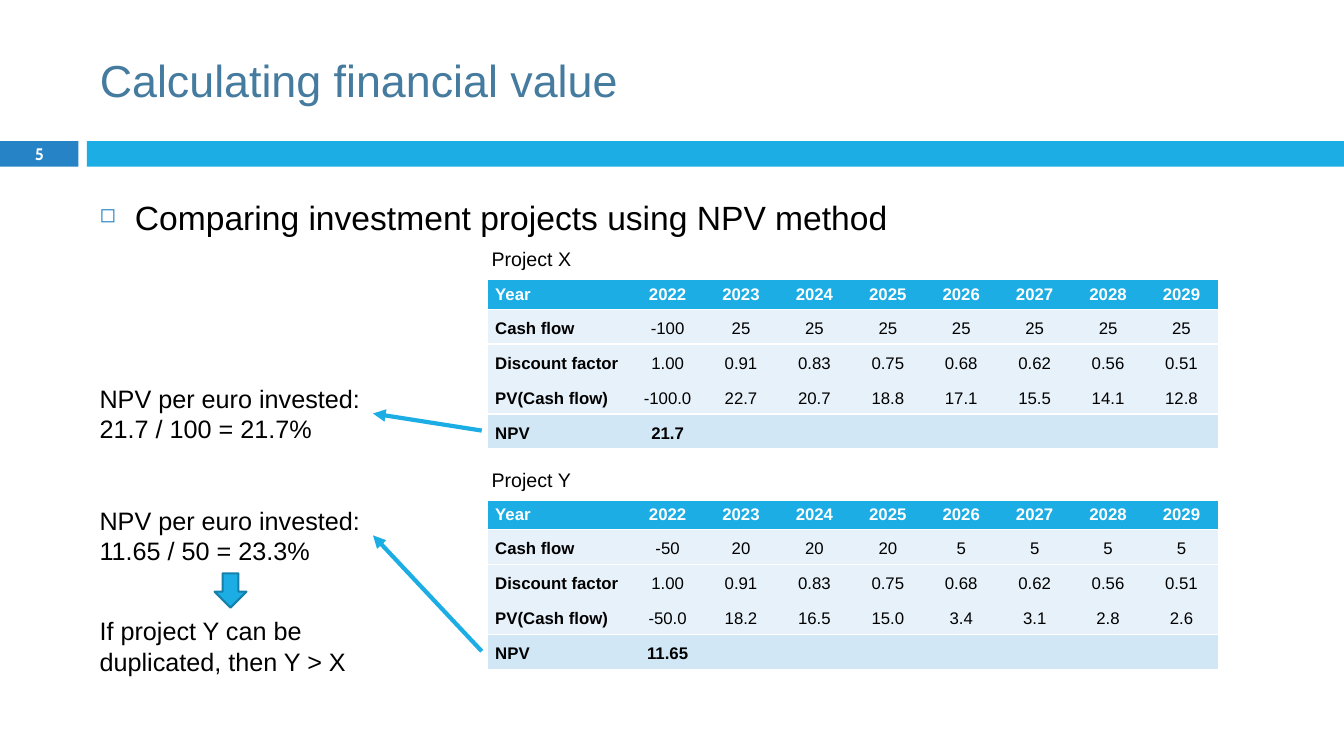
"""Build the slide that compares two investment projects by the NPV method."""
from lxml.etree import SubElement
from pptx import Presentation
from pptx.dml.color import RGBColor
from pptx.enum.shapes import MSO_CONNECTOR, MSO_SHAPE
from pptx.enum.text import MSO_ANCHOR, MSO_AUTO_SIZE, PP_ALIGN
from pptx.oxml.ns import qn
from pptx.util import Cm, Pt

WHITE = RGBColor(0xFF, 0xFF, 0xFF)
BLACK = RGBColor(0x00, 0x00, 0x00)
TITLE_BLUE = RGBColor(0x45, 0x7B, 0x9E)
DARK_BLUE = RGBColor(0x26, 0x83, 0xC6)
BLUE = RGBColor(0x1C, 0xAD, 0xE4)
EDGE_BLUE = RGBColor(0x15, 0x80, 0xA9)
PALE_BLUE = RGBColor(0xE7, 0xF1, 0xFA)
LIGHT_BLUE = RGBColor(0xD1, 0xE7, 0xF6)

LEFT = Cm(2.26)
TABLE_LEFT = Cm(12.29)
YEAR_WIDTH = Cm(1.85)
YEARS = [str(year) for year in range(2022, 2030)]
DISCOUNTS = "1.00 0.91 0.83 0.75 0.68 0.62 0.56 0.51".split()
PROJECTS = [
    ("Project X", Cm(7.04), Cm(9.53), "21.7 / 100 = 21.7%", "21.7",
     "-100 25 25 25 25 25 25 25", "-100.0 22.7 20.7 18.8 17.1 15.5 14.1 12.8"),
    ("Project Y", Cm(12.6), Cm(12.6), "11.65 / 50 = 23.3%", "11.65",
     "-50 20 20 20 5 5 5 5", "-50.0 18.2 16.5 15.0 3.4 3.1 2.8 2.6"),
]
ROW_BORDERS = [("lnT", "lnB"), ("lnT",), (), ("lnB",), ("lnT", "lnB")]
ROW_FILLS = [BLUE, PALE_BLUE, PALE_BLUE, PALE_BLUE, LIGHT_BLUE]
CELL_FORMAT = {"margin_left": Cm(0.19), "margin_right": Cm(0.19), "margin_top": 0,
               "margin_bottom": 0, "vertical_anchor": MSO_ANCHOR.MIDDLE}


def write(frame, lines, color, font_format, paragraph_format):
    for index, line in enumerate(lines):
        paragraph = frame.add_paragraph() if index else frame.paragraphs[0]
        run = paragraph.add_run()
        run.text = line
        run.font.color.rgb = color
        for name, value in ({"name": "Arial"} | font_format).items():
            setattr(run.font, name, value)
        for name, value in paragraph_format.items():
            setattr(paragraph, name, value)


def add_label(left, top, width, height, lines, size, wrap=False):
    frame = slide.shapes.add_textbox(left, top, width, height).text_frame
    frame.word_wrap = wrap
    frame.auto_size = MSO_AUTO_SIZE.SHAPE_TO_FIT_TEXT
    write(frame, lines, BLACK, {"size": Pt(size)}, {})


presentation = Presentation()
presentation.slide_width, presentation.slide_height = Cm(33.87), Cm(19.05)
slide = presentation.slides.add_slide(presentation.slide_layouts[5])

for left, width, color in [(0, Cm(1.98), DARK_BLUE), (Cm(2.19), Cm(31.68), BLUE)]:
    band = slide.shapes.add_shape(MSO_SHAPE.RECTANGLE, left, Cm(3.56), width, Cm(0.64))
    band.shadow.inherit = False
    band.fill.solid()
    band.fill.fore_color.rgb = color
    band.line.fill.background()

title = slide.shapes.title
for name, value in {"left": LEFT, "top": Cm(0.64), "width": Cm(30.2), "height": Cm(2.74)}.items():
    setattr(title, name, value)
title.text_frame.vertical_anchor = MSO_ANCHOR.MIDDLE
write(title.text_frame, ["Calculating financial value"], TITLE_BLUE,
      {"size": Pt(32)}, {"alignment": PP_ALIGN.LEFT})

page_number = slide.shapes.add_textbox(0, Cm(3.53), Cm(1.98), Cm(0.69)).text_frame
page_number.word_wrap = True
page_number.vertical_anchor = MSO_ANCHOR.MIDDLE
write(page_number, ["5"], WHITE, {"name": "Cabin", "size": Pt(11.9), "bold": True},
      {"alignment": PP_ALIGN.CENTER})

topic = slide.shapes.add_textbox(LEFT, Cm(4.32), Cm(28.47), Cm(14.1)).text_frame
topic.word_wrap = True
write(topic, ["Comparing investment projects using NPV method"], BLACK,
      {"size": Pt(24)}, {"line_spacing": 1.5, "space_before": Pt(7)})
bullet = topic.paragraphs[0]._p.get_or_add_pPr()
bullet.set("marL", str(Cm(0.89)))
bullet.set("indent", str(-Cm(0.89)))
SubElement(SubElement(bullet, qn("a:buClr")), qn("a:srgbClr"), val=str(DARK_BLUE))
SubElement(bullet, qn("a:buSzPct"), val="60000")
SubElement(bullet, qn("a:buChar"), char="◻")

for project, top, note_top, ratio, npv, cash_flows, present_values in PROJECTS:
    add_label(Cm(12.14), top - Cm(0.94), Cm(2.51), Cm(0.86), [project], 14)
    rows = [
        ["Year", *YEARS],
        ["Cash flow", *cash_flows.split()],
        ["Discount factor", *DISCOUNTS],
        ["PV(Cash flow)", *present_values.split()],
        ["NPV", npv, *[""] * 7],
    ]
    table = slide.shapes.add_table(5, 9, TABLE_LEFT, top, Cm(18.41), Cm(4.27)).table
    table.first_row = table.horz_banding = False
    table._tbl.tblPr.find(qn("a:tableStyleId")).text = "{2D5ABB26-0587-4C30-8999-92F81FD0307C}"
    for index, column in enumerate(table.columns):
        column.width = YEAR_WIDTH if index else Cm(3.61)
    for row_index, texts in enumerate(rows):
        table.rows[row_index].height = Cm(0.88) if row_index else Cm(0.75)
        spacing = Pt(1) if row_index else Pt(2)
        for column_index, text in enumerate(texts):
            cell = table.cell(row_index, column_index)
            for name, value in CELL_FORMAT.items():
                setattr(cell, name, value)
            for side in ROW_BORDERS[row_index]:
                border = SubElement(cell._tc.get_or_add_tcPr(), qn(f"a:{side}"), w=str(Pt(1)))
                SubElement(SubElement(border, qn("a:solidFill")), qn("a:srgbClr"), val=str(WHITE))
            cell.fill.solid()
            cell.fill.fore_color.rgb = ROW_FILLS[row_index]
            if text:
                write(cell.text_frame, [text], BLACK if row_index else WHITE,
                      {"size": Pt(12), "bold": row_index in (0, 4) or column_index == 0},
                      {"alignment": PP_ALIGN.CENTER if column_index else PP_ALIGN.LEFT,
                       "line_spacing": Pt(16) if row_index else None,
                       "space_before": spacing, "space_after": spacing})

    add_label(LEFT, note_top, Cm(7.14), Cm(1.8), ["NPV per euro invested:", ratio], 18)
    arrow = slide.shapes.add_connector(MSO_CONNECTOR.STRAIGHT, Cm(12.14), top + Cm(3.81),
                                       Cm(9.4), note_top + Cm(0.89))
    arrow.line.color.rgb = BLUE
    arrow.line.width = Pt(3)
    arrow_properties = arrow._element.spPr
    SubElement(arrow_properties.find(qn("a:ln")), qn("a:tailEnd"), type="triangle")
    SubElement(arrow_properties, qn("a:effectLst"))

implication = slide.shapes.add_shape(MSO_SHAPE.DOWN_ARROW, Cm(5.41), Cm(14.45), Cm(0.8), Cm(0.86))
implication.shadow.inherit = False
implication.fill.solid()
implication.fill.fore_color.rgb = BLUE
implication.line.color.rgb = EDGE_BLUE
implication.line.width = Pt(1.5)
add_label(LEFT, Cm(15.39), Cm(7.87), Cm(1.8), ["If project Y can be duplicated, then Y > X"], 18, True)

presentation.save("out.pptx")
